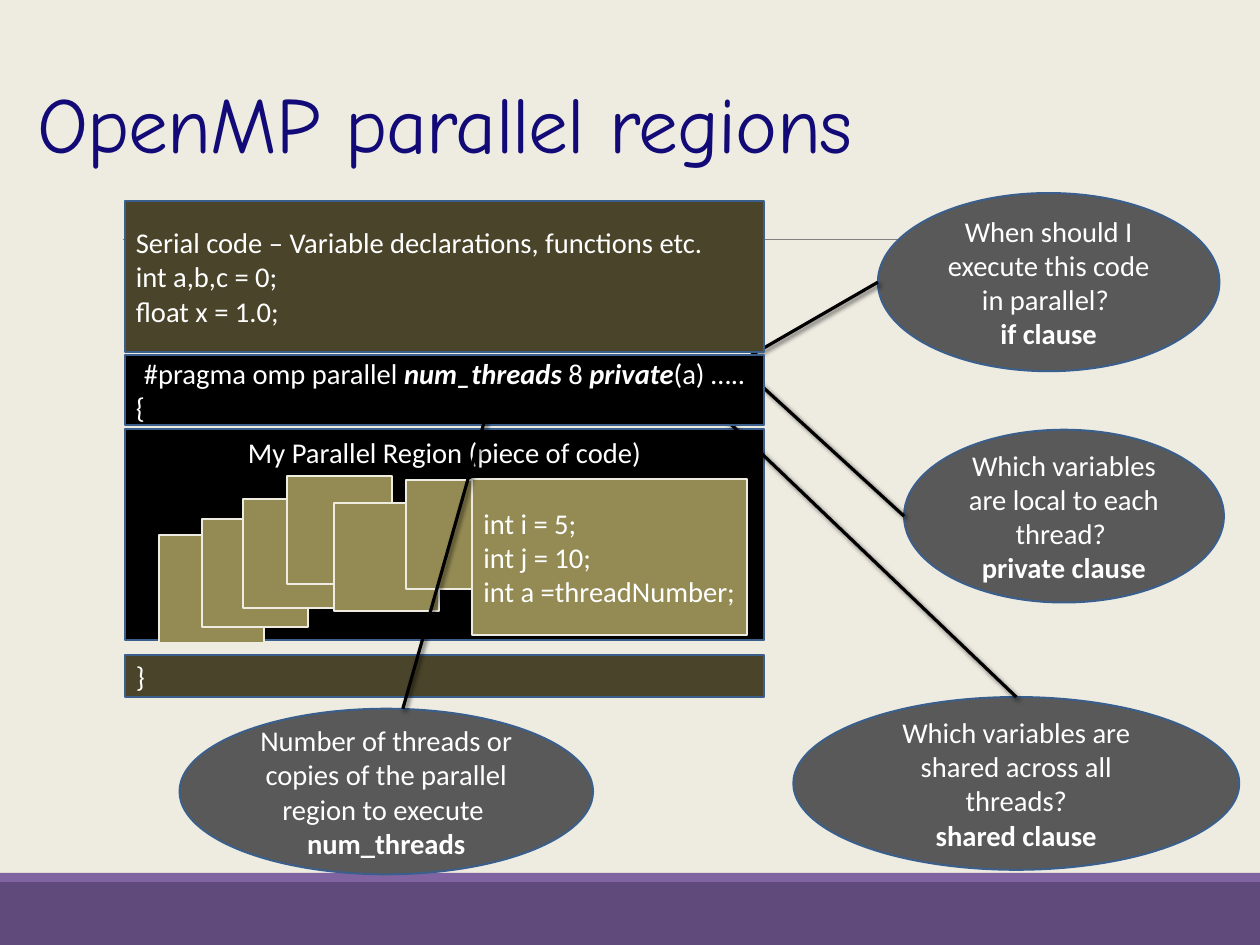
from lxml import etree
from pptx import Presentation
from pptx.dml.color import RGBColor as RGB
from pptx.enum.shapes import MSO_CONNECTOR as LINK, MSO_SHAPE as FORM
from pptx.enum.text import MSO_ANCHOR as ANCHOR, MSO_AUTO_SIZE as FIT, PP_ALIGN as ALIGN
from pptx.oxml.ns import qn
from pptx.util import Cm, Pt

HUES = {
    "page": "EEECE1", "band": "604A7B", "strip": "8064A2", "rule": "808080",
    "title": "120A76", "edge": "3A5F8C", "black": "000000", "serial": "4A452A",
    "clause": "595959", "thread": "948A54", "white": "FFFFFF",
}


def hue(name):
    return RGB.from_string(HUES[name])


def shape(slide, form, box, fill, edge=None):
    item = slide.shapes.add_shape(form, *map(Cm, box))
    item.shadow.inherit = False
    item.fill.solid()
    item.fill.fore_color.rgb = hue(fill)
    if edge:
        item.line.color.rgb = hue(edge)
        item.line.width = Pt(1.25)
    else:
        item.line.fill.background()
    return item


def style(run, size=18, face="Calibri", tint="white"):
    run.font.size = Pt(size)
    run.font.name = face
    run.font.color.rgb = hue(tint)


def write(item, text, align=ALIGN.LEFT, anchor=ANCHOR.MIDDLE):
    frame = item.text_frame
    frame.text = text
    frame.word_wrap = True
    frame.vertical_anchor = anchor
    for para in frame.paragraphs:
        para.alignment = align
        for run in para.runs:
            style(run)
    return frame


def line(slide, start, end, tint, width, shadow=False):
    item = slide.shapes.add_connector(LINK.STRAIGHT, *map(Cm, start + end))
    item.line.color.rgb = hue(tint)
    item.line.width = Pt(width)
    effect = etree.SubElement(item._element.spPr, qn("a:effectLst"))
    if shadow:
        cast = etree.SubElement(effect, qn("a:outerShdw"), blurRad=str(Pt(3)),
                                dist=str(Pt(2)), dir="2700000", rotWithShape="0")
        shade = etree.SubElement(cast, qn("a:srgbClr"), val=HUES["black"])
        etree.SubElement(shade, qn("a:alpha"), val="60000")


def footer(slide, box):
    left, top, width, height = box
    shape(slide, FORM.RECTANGLE, (left, top + 0.2, width, height - 0.2), "band")
    shape(slide, FORM.RECTANGLE, (left, top, width, 0.2), "strip")


def header(slide, box, text):
    left, top, width, height = box
    title = slide.shapes.title
    title.left, title.top, title.width, title.height = map(Cm, box)
    frame = write(title, text, anchor=ANCHOR.BOTTOM)
    frame.auto_size = FIT.NONE
    para = frame.paragraphs[0]
    para.line_spacing = 0.85
    run = para.runs[0]
    style(run, 50, "Comic Neue", "title")
    run.font._element.set("spc", "-60")
    base = top + height + 1.42
    line(slide, (left + 2.16, base), (left + width, base), "rule", 0.5)


def region(slide, box):
    left, top, width, height = box
    back = shape(slide, FORM.RECTANGLE, box, "black", "edge")
    write(back, "My Parallel Region (piece of code)", ALIGN.CENTER, ANCHOR.TOP)
    steps = [(0.76, 2.36), (1.73, 2), (2.64, 1.57), (3.61, 1.04), (4.65, 1.65), (6.25, 1.14)]
    for dx, dy in steps:
        shape(slide, FORM.RECTANGLE, (left + dx, top + dy, 2.34, 2.41), "thread", "page")
    front = shape(slide, FORM.RECTANGLE, (left + 7.72, top + 1.11, 6.12, 3.48), "thread", "page")
    write(front, "int i = 5;\nint j = 10;\nint a =threadNumber;")


def code(slide, box):
    left, top, width, height = box

    def block(dy, tall, fill, text):
        item = shape(slide, FORM.RECTANGLE, (left, top + dy, width, tall), fill, "edge")
        return write(item, text)

    block(0, 3.35, "serial",
          "Serial code – Variable declarations, functions etc.\nint a,b,c = 0;\nfloat x = 1.0;")
    pragma = block(3.43, 1.55, "black", "#pragma omp parallel \n{").paragraphs[0]
    pragma.alignment = ALIGN.CENTER
    for text, strong in [("num_threads", True), (" 8 ", False), ("private", True), ("(a) …..", False)]:
        run = pragma.add_run()
        run.text = text
        style(run)
        run.font.bold = run.font.italic = strong
    block(height - 0.94, 0.94, "serial", "}")


def clause(slide, box, ask, name, start, spot):
    left, top, width, height = box
    oval = shape(slide, FORM.OVAL, box, "clause", "edge")
    frame = write(oval, f"{ask}\n{name}", ALIGN.CENTER)
    frame.paragraphs[1].runs[0].font.bold = True
    end = (left + spot[0] * width, top + spot[1] * height)
    line(slide, start, end, "black", 2, True)


def main():
    deck = Presentation()
    deck.slide_width, deck.slide_height = Cm(28), Cm(21)
    slide = deck.slides.add_slide(deck.slide_layouts[5])
    slide.background.fill.solid()
    slide.background.fill.fore_color.rgb = hue("page")
    footer(slide, (0, 19.4, 28, 1.6))
    header(slide, (0.58, 0.89, 25.04, 3), "OpenMP parallel regions")
    region(slide, (2.77, 9.53, 14.22, 4.7))
    clause(slide, (19.51, 4.29, 7.59, 3.96), "When should I execute this code in parallel? ",
           "if clause", (15.54, 8.56), (0, 0.5))
    clause(slide, (20.09, 9.55, 7.11, 3.84), "Which variables are local to each thread? ",
           "private clause", (16.51, 8.2), (0, 0.5))
    clause(slide, (17.63, 15.49, 9.91, 3.84), "Which variables are shared across all threads?",
           "shared clause", (15.44, 8.66), (0.5, 0))
    code(slide, (2.77, 4.47, 14.22, 11.02))
    clause(slide, (3.99, 15.75, 9.19, 3.68),
           "Number of threads or copies of the parallel region to execute ",
           "num_threads", (11.02, 8.46), (0.54, 0))
    deck.save("out.pptx")


if __name__ == "__main__":
    main()
